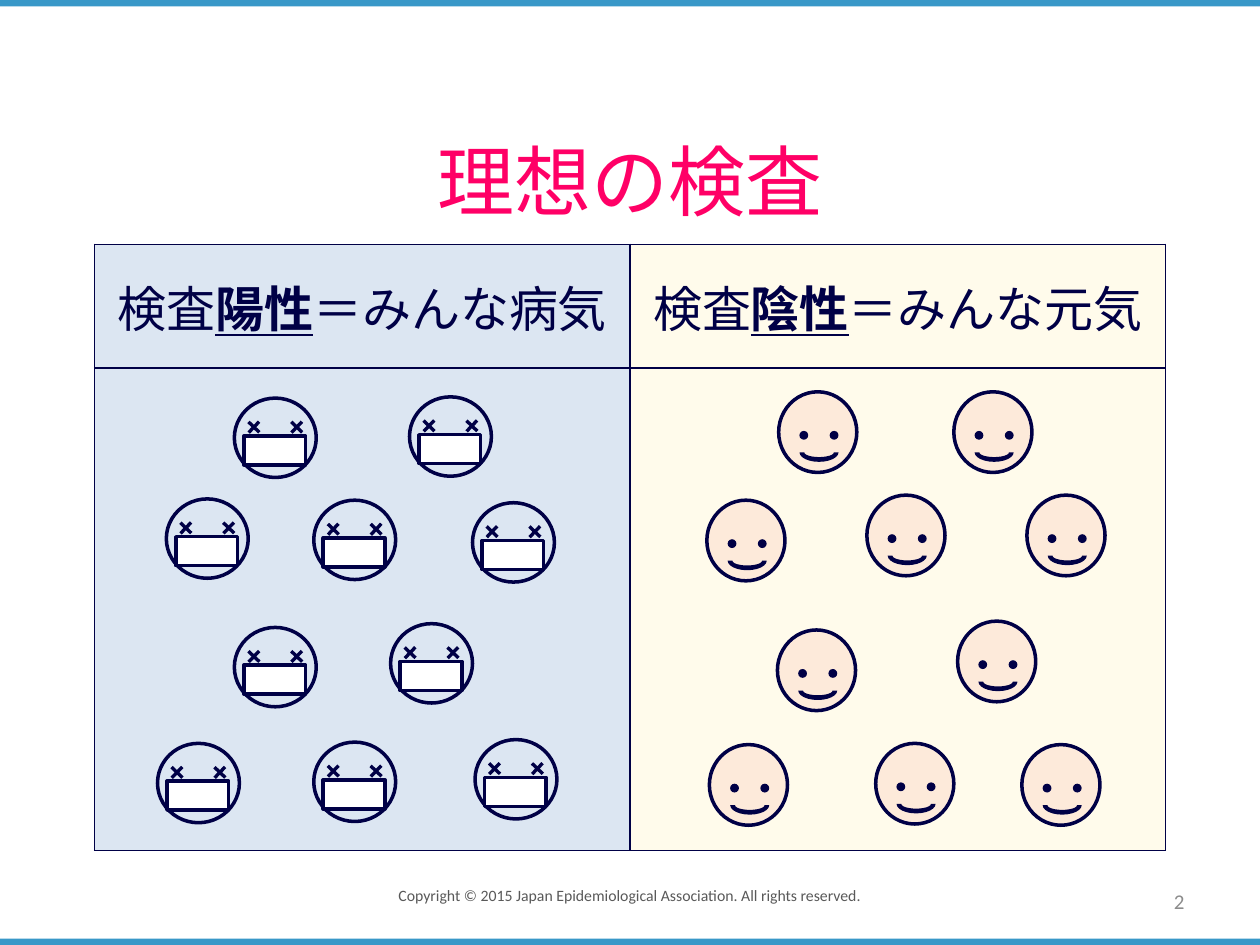
from dataclasses import dataclass
from lxml.etree import SubElement
from pptx import Presentation
from pptx.dml.color import RGBColor
from pptx.enum.shapes import MSO_SHAPE as Kind
from pptx.enum.text import MSO_ANCHOR as Anchor, MSO_AUTO_SIZE as Fit, PP_ALIGN as Align
from pptx.oxml.ns import qn
from pptx.util import Inches, Pt


@dataclass(frozen=True)
class Theme:
    navy: str = "000046"
    pink: str = "FF0066"
    bar: str = "3998C8"
    ill: str = "DCE6F2"
    well: str = "FFFBEB"
    skin: str = "FDEADA"
    white: str = "FFFFFF"
    note: str = "595959"
    page: str = "8C8C8C"
    latin: str = "Calibri"
    kanji: str = "Noto Sans CJK JP"
    title: int = 44
    head: int = 28
    num: int = 12
    small: int = 9
    edge: int = 2
    rule: int = 1


# Grid of 100 columns by 75 rows on a 10 x 7.5 inch slide
COLS, ROWS = 100, 75
WIDE, HIGH = Inches(10), Inches(7.5)

# Top left corner of each face, in columns and rows
SICK = [(18.6, 31.6), (32.5, 31.5), (13.2, 39.6), (24.9, 39.7), (37.5, 39.9),
        (18.6, 49.8), (31, 49.5), (12.5, 59), (24.9, 58.9), (37.7, 58.7)]
FIT = [(61.8, 31.1), (75.7, 31.1), (56.1, 39.7), (68.8, 39.3), (81.5, 39.3),
       (61.7, 50), (76, 49.3), (56.3, 59.1), (69.5, 59), (81.1, 59.1)]


def color(code):
    return RGBColor.from_string(code)


def write(frame, *parts, size, ink, font, align=Align.CENTER, anchor=Anchor.MIDDLE):
    """Fill a frame with one line; a part given as a tuple is bold and underlined."""
    frame.word_wrap = True
    frame.auto_size = Fit.NONE
    frame.vertical_anchor = anchor
    line = frame.paragraphs[0]
    line.alignment = align
    for part in parts:
        run = line.add_run()
        strong = isinstance(part, tuple)
        run.text = part[0] if strong else part
        run.font.bold = run.font.underline = strong
        run.font.size, run.font.name = Pt(size), font
        run.font.color.rgb = color(ink)
        SubElement(run.font._element, qn("a:ea"), typeface=font)


class Board:
    def __init__(self, deck, theme):
        self.theme = theme
        self.slide = deck.slides.add_slide(deck.slide_layouts[5])

    def box(self, x, y, w, h):
        return (round(x * WIDE / COLS), round(y * HIGH / ROWS),
                round(w * WIDE / COLS), round(h * HIGH / ROWS))

    def title(self, text, *place):
        shape = self.slide.shapes.title
        shape.left, shape.top, shape.width, shape.height = self.box(*place)
        write(shape.text_frame, text, size=self.theme.title,
              ink=self.theme.pink, font=self.theme.kanji)

    def label(self, text, *place, **style):
        shape = self.slide.shapes.add_textbox(*self.box(*place))
        write(shape.text_frame, text, font=self.theme.latin, **style)

    def shape(self, kind, *place, fill, line=None, turn=0, group=None):
        home = group or self.slide
        item = home.shapes.add_shape(kind, *self.box(*place))
        item.shadow.inherit = False
        item.fill.solid()
        item.fill.fore_color.rgb = color(fill)
        if line:
            item.line.color.rgb = color(line)
            item.line.width = Pt(self.theme.edge)
        else:
            item.line.fill.background()
        item.rotation = turn
        return item

    def border(self, cell):
        props = cell._tc.get_or_add_tcPr()
        for at, side in enumerate(("lnL", "lnR", "lnT", "lnB")):
            edge = props.makeelement(qn(f"a:{side}"), {"w": str(Pt(self.theme.rule))})
            paint = SubElement(edge, qn("a:solidFill"))
            SubElement(paint, qn("a:srgbClr"), val=self.theme.navy)
            props.insert(at, edge)

    def table(self, heads, fills, rows, *place):
        grid = self.slide.shapes.add_table(len(rows), len(heads), *self.box(*place)).table
        for row, high in zip(grid.rows, rows):
            row.height = round(high * HIGH / ROWS)
        for col, (head, fill) in enumerate(zip(heads, fills)):
            for row in range(len(rows)):
                cell = grid.cell(row, col)
                cell.fill.solid()
                cell.fill.fore_color.rgb = color(fill)
                self.border(cell)
            top = grid.cell(0, col)
            write(top.text_frame, *head, size=self.theme.head,
                  ink=self.theme.navy, font=self.theme.kanji)
            top.vertical_anchor = Anchor.MIDDLE

    def sick(self, x, y):
        look, group = self.theme, self.slide.shapes.add_group_shape()
        self.shape(Kind.OVAL, x, y, 6.5, 6.3, fill=look.ill, line=look.navy, group=group)
        self.shape(Kind.RECTANGLE, x + 0.75, y + 3, 4.9, 2.3,
                   fill=look.white, line=look.navy, group=group)
        for eye in (0.95, 4.35):
            cross = self.shape(Kind.CROSS, x + eye, y + 1.7, 1.2, 1.2,
                               fill=look.navy, turn=43.8, group=group)
            cross.adjustments[0] = 0.39

    def fit(self, x, y):
        look, group = self.theme, self.slide.shapes.add_group_shape()
        self.shape(Kind.OVAL, x, y, 6.2, 6.4, fill=look.skin, line=look.navy, group=group)
        for eye in (1.65, 4.05):
            self.shape(Kind.OVAL, x + eye, y + 3.1, 0.7, 0.7, fill=look.navy, group=group)
        self.shape(Kind.BLOCK_ARC, x + 1.65, y + 4.05, 3.1, 1.5,
                   fill=look.navy, turn=180, group=group)


def main():
    deck = Presentation()
    deck.slide_width, deck.slide_height = WIDE, HIGH
    look = Theme()
    board = Board(deck, look)

    # Frame bars and footer
    for top in (0, ROWS - 0.5):
        board.shape(Kind.RECTANGLE, 0, top, COLS, 0.5, fill=look.bar)
    board.label("Copyright © 2015 Japan Epidemiological Association. All rights reserved.",
                28.7, 69.8, 42.5, 2.5, size=look.small, ink=look.note, anchor=Anchor.TOP)
    board.label("2", 71.7, 69.5, 23.3, 4, size=look.num, ink=look.page, align=Align.RIGHT)

    # Title and two-column table
    board.title("理想の検査", 5, 9.2, 90, 10.2)
    heads = [("検査", ("陽性",), "＝みんな病気"), ("検査", ("陰性",), "＝みんな元気")]
    board.table(heads, (look.ill, look.well), (9.8, 38.3), 7.5, 19.4, 85, 48.1)

    # Faces: masked on the left, smiling on the right
    for spot in SICK:
        board.sick(*spot)
    for spot in FIT:
        board.fit(*spot)

    deck.save("out.pptx")


if __name__ == "__main__":
    main()
